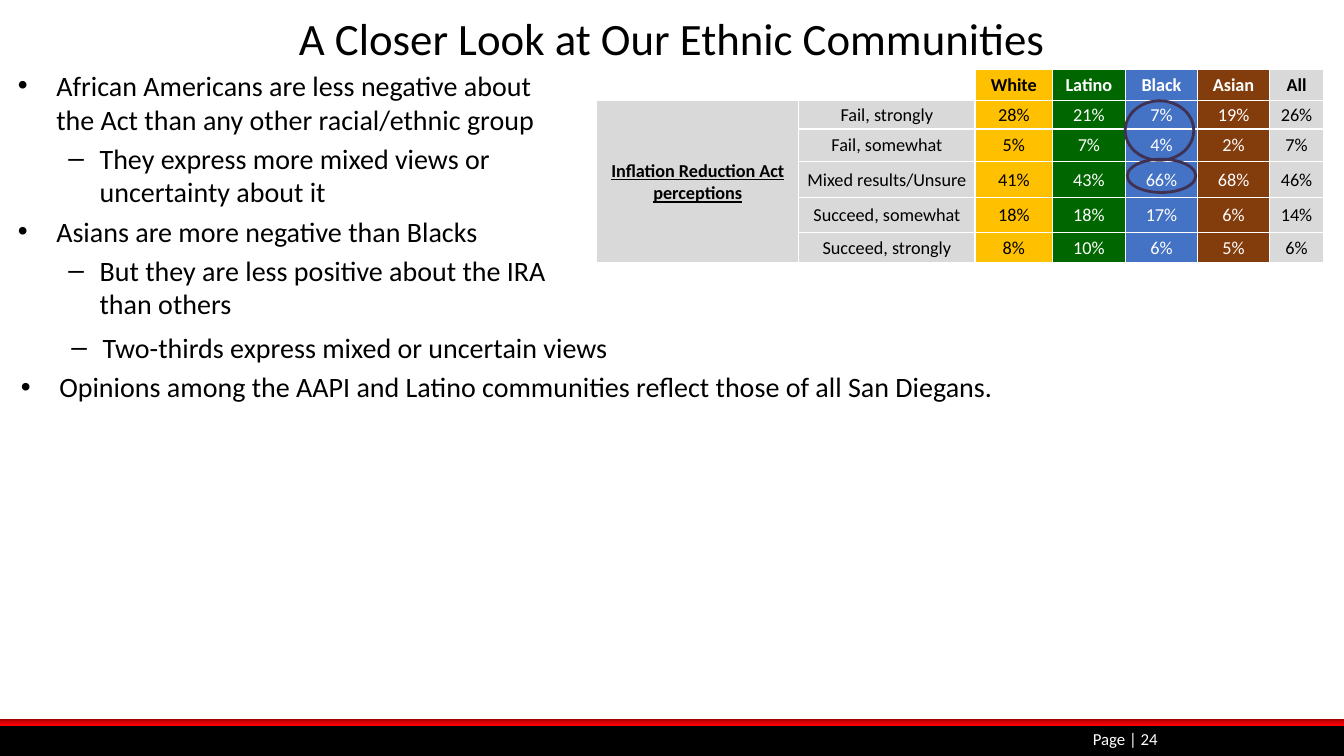
from copy import deepcopy
from dataclasses import dataclass

from lxml.etree import SubElement
from pptx import Presentation
from pptx.dml.color import RGBColor as RGB
from pptx.enum.shapes import MSO_SHAPE as Kind
from pptx.enum.text import MSO_ANCHOR as Anchor, PP_ALIGN as Align
from pptx.oxml.ns import qn
from pptx.util import Emu, Pt

SCALE = 9144  # EMU per px, 100 px to the inch


def px(count: int) -> Emu:
    return Emu(count * SCALE)


@dataclass(frozen=True)
class Theme:
    font: str = "Calibri"
    black: str = "000000"
    white: str = "FFFFFF"
    gray: str = "D9D9D9"
    ring: str = "403152"
    reds: tuple[str, ...] = ("970000", "D70000", "FF0000")
    title: int = 32
    body: int = 20
    cell: int = 13
    foot: int = 12


@dataclass(frozen=True)
class Box:
    left: int
    top: int
    width: int
    height: int

    def emu(self) -> list[Emu]:
        return [px(n) for n in (self.left, self.top, self.width, self.height)]


@dataclass(frozen=True)
class Level:
    mark: str
    left: int
    hang: int


@dataclass(frozen=True)
class Point:
    level: Level
    text: str


@dataclass(frozen=True)
class Group:
    name: str
    width: int
    fill: str
    ink: str
    shares: tuple[int, ...]


THEME = Theme()
MAIN = Level("•", 38, 38)
SUB = Level("–", 81, 31)

LEFT = [
    Point(MAIN, "African Americans are less negative about the Act than any other racial/ethnic group"),
    Point(SUB, "They express more mixed views or uncertainty about it"),
    Point(MAIN, "Asians are more negative than Blacks"),
    Point(SUB, "But they are less positive about the IRA than others"),
]
LOWER = [
    Point(SUB, "Two-thirds express mixed or uncertain views"),
    Point(MAIN, "Opinions among the AAPI and Latino communities reflect those of all San Diegans."),
]

TOPIC = "Inflation Reduction Act perceptions"
VIEWS = ["Fail, strongly", "Fail, somewhat", "Mixed results/Unsure",
         "Succeed, somewhat", "Succeed, strongly"]
GROUPS = [
    Group("White", 77, "FFC000", THEME.black, (28, 5, 41, 18, 8)),
    Group("Latino", 72, "006600", THEME.white, (21, 7, 43, 18, 10)),
    Group("Black", 72, "4472C4", THEME.white, (7, 4, 66, 17, 6)),
    Group("Asian", 71, "833C0C", THEME.white, (19, 2, 68, 6, 5)),
    Group("All", 54, THEME.gray, THEME.black, (26, 7, 46, 14, 6)),
]
GRID = Box(592, 69, 721, 191)
WIDTHS = [200, 175] + [group.width for group in GROUPS]
HEIGHTS = [30, 28, 32, 36, 35, 30]
RINGS = [Box(1116, 100, 68, 59), Box(1118, 158, 68, 33)]


def add_run(para, text: str, size: int, ink: str, bold=False, line=False) -> None:
    run = para.add_run()
    run.text = text
    font = run.font
    font.name, font.size, font.bold, font.underline = THEME.font, Pt(size), bold, line
    font.color.rgb = RGB.from_string(ink)


def add_frame(slide, box: Box):
    frame = slide.shapes.add_textbox(*box.emu()).text_frame
    frame.word_wrap = True
    return frame


def add_line(slide, box: Box, text: str, size: int, ink: str, align: Align) -> None:
    frame = add_frame(slide, box)
    frame.vertical_anchor = Anchor.MIDDLE
    para = frame.paragraphs[0]
    para.alignment = align
    add_run(para, text, size, ink)


def add_points(slide, box: Box, points: list[Point]) -> None:
    frame = add_frame(slide, box)
    for i, point in enumerate(points):
        para = frame.add_paragraph() if i else frame.paragraphs[0]
        para.space_before = Pt(THEME.body * 0.2)
        props = para._p.get_or_add_pPr()
        props.set("marL", str(px(point.level.left)))
        props.set("indent", str(-px(point.level.hang)))
        SubElement(props, qn("a:buFont"), typeface="Arial")
        SubElement(props, qn("a:buChar"), char=point.level.mark)
        add_run(para, point.text, THEME.body, THEME.black)


def add_shape(slide, kind: Kind, box: Box):
    shape = slide.shapes.add_shape(kind, *box.emu())
    shape.shadow.inherit = False
    return shape


def add_bars(slide) -> None:
    """Draw the black footer and the red band above it."""
    foot = add_shape(slide, Kind.RECTANGLE, Box(0, 719, 1333, 31))
    foot.fill.solid()
    foot.fill.fore_color.rgb = RGB.from_string(THEME.black)
    foot.line.fill.background()

    band = add_shape(slide, Kind.RECTANGLE, Box(-2, 713, 1335, 7))
    band.line.fill.background()
    band.fill.gradient()
    band.fill.gradient_angle = 270
    stops = band._element.spPr.find(".//" + qn("a:gsLst"))
    stops.insert(1, deepcopy(stops[0]))
    for i, (stop, red) in enumerate(zip(band.fill.gradient_stops, THEME.reds)):
        stop.position = i / 2
        stop.color.rgb = RGB.from_string(red)


def edge(cell) -> None:
    """Give the cell white borders on all sides."""
    props = cell._tc.get_or_add_tcPr()
    for side in ("lnL", "lnR", "lnT", "lnB"):
        line = SubElement(props, qn("a:" + side), w=str(Pt(1)))
        fill = SubElement(line, qn("a:solidFill"))
        SubElement(fill, qn("a:srgbClr"), val=THEME.white)


def set_cell(cell, text="", fill="", ink=THEME.black, bold=False, line=False) -> None:
    edge(cell)
    if fill:
        cell.fill.solid()
        cell.fill.fore_color.rgb = RGB.from_string(fill)
    else:
        cell.fill.background()
    cell.margin_left = cell.margin_right = cell.margin_top = px(1)
    cell.margin_bottom = 0
    cell.vertical_anchor = Anchor.MIDDLE
    para = cell.text_frame.paragraphs[0]
    para.alignment = Align.CENTER
    add_run(para, text, THEME.cell, ink, bold, line)


def add_grid(slide) -> None:
    table = slide.shapes.add_table(len(HEIGHTS), len(WIDTHS), *GRID.emu()).table
    table.first_row = table.horz_banding = False
    for column, width in zip(table.columns, WIDTHS):
        column.width = px(width)
    for row, height in zip(table.rows, HEIGHTS):
        row.height = px(height)
    table.cell(0, 0).merge(table.cell(0, 1))
    table.cell(1, 0).merge(table.cell(len(VIEWS), 0))

    for c in range(2):
        set_cell(table.cell(0, c))
    for r, view in enumerate(VIEWS, 1):
        topic = TOPIC if r == 1 else ""
        set_cell(table.cell(r, 0), topic, THEME.gray, bold=True, line=True)
        set_cell(table.cell(r, 1), view, THEME.gray)
    for c, group in enumerate(GROUPS, 2):
        set_cell(table.cell(0, c), group.name, group.fill, group.ink, bold=True)
        for r, share in enumerate(group.shares, 1):
            set_cell(table.cell(r, c), f"{share}%", group.fill, group.ink)


def add_ring(slide, box: Box) -> None:
    ring = add_shape(slide, Kind.OVAL, box)
    ring.fill.background()
    ring.line.color.rgb = RGB.from_string(THEME.ring)
    ring.line.width = Pt(2)


def main() -> None:
    deck = Presentation()
    deck.slide_width, deck.slide_height = px(1333), px(750)
    slide = deck.slides.add_slide(deck.slide_layouts[6])
    add_bars(slide)
    add_points(slide, Box(8, 63, 571, 154), LEFT)
    add_line(slide, Box(925, 720, 233, 25), "Page | 24", THEME.foot, THEME.white, Align.RIGHT)
    add_line(slide, Box(8, 5, 1317, 64), "A Closer Look at Our Ethnic Communities",
             THEME.title, THEME.black, Align.CENTER)
    add_grid(slide)
    for box in RINGS:
        add_ring(slide, box)
    add_points(slide, Box(11, 323, 1296, 154), LOWER)
    deck.save("out.pptx")


if __name__ == "__main__":
    main()
